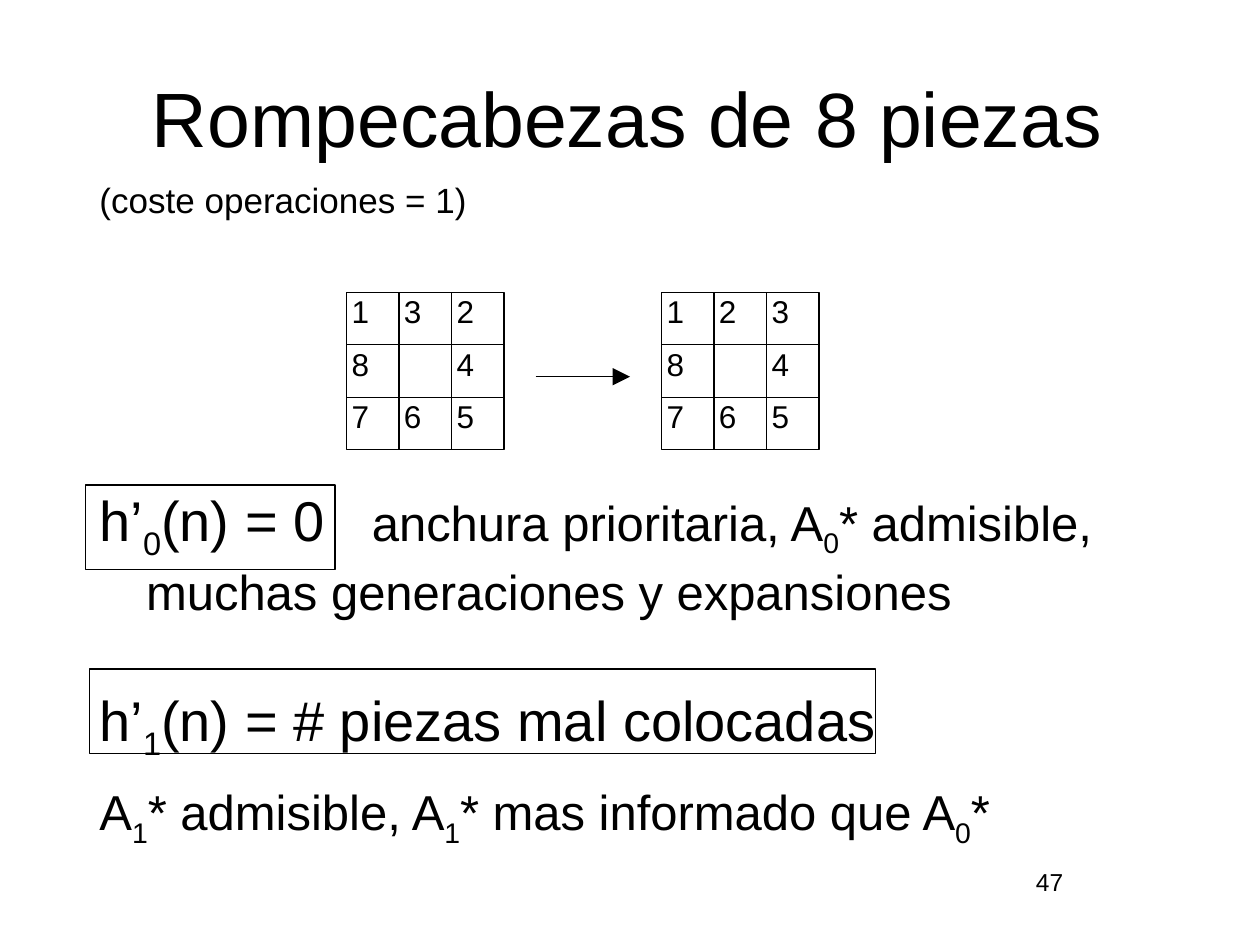
from dataclasses import dataclass

from lxml import etree
from pptx import Presentation
from pptx.dml.color import RGBColor
from pptx.enum.shapes import MSO_CONNECTOR, MSO_SHAPE
from pptx.enum.text import MSO_ANCHOR, PP_ALIGN
from pptx.oxml.ns import qn
from pptx.util import Inches, Pt

LINE = MSO_CONNECTOR.STRAIGHT
RECT = MSO_SHAPE.RECTANGLE
MIDDLE, TOP = MSO_ANCHOR.MIDDLE, MSO_ANCHOR.TOP
LEFT, CENTER = PP_ALIGN.LEFT, PP_ALIGN.CENTER


@dataclass(frozen=True)
class Theme:
    """Colours, font and type sizes of the slide."""
    ink: RGBColor = RGBColor(0, 0, 0)
    font: str = "Arial"
    title: int = 44
    rule: int = 32
    body: int = 28
    note: int = 20
    tile: int = 18
    page: int = 14
    line: float = 0.75


THEME = Theme()
START = ["132", "8 4", "765"]
GOAL = ["123", "8 4", "765"]
SUB = {"baseline": "-25000"}
WIDE = {"spc": "1800"}
NOTES = [
    (4.8, [("(coste operaciones = 1)", THEME.note, {})]),
    (151, [("h’", THEME.rule, {}), ("0", THEME.rule, SUB),
           ("(n) = 0", THEME.rule, {}), (" ", THEME.rule, WIDE),
           ("anchura prioritaria, A", THEME.body, {}),
           ("0", THEME.body, SUB),
           ("* admisible, muchas generaciones y expansiones",
            THEME.body, {})]),
    (37, [("h’", THEME.rule, {}), ("1", THEME.rule, SUB),
          ("(n) = # piezas mal colocadas", THEME.rule, {})]),
    (11.5, [("A", THEME.body, {}), ("1", THEME.body, SUB),
            ("* admisible, A", THEME.body, {}), ("1", THEME.body, SUB),
            ("* mas informado que A", THEME.body, {}),
            ("0", THEME.body, SUB), ("*", THEME.body, {})]),
]


def style(run, size, extra=None):
    """Give a run its font, size, colour and extra attributes."""
    run.font.name = THEME.font
    run.font.size = Pt(size)
    run.font.color.rgb = THEME.ink
    for name, value in (extra or {}).items():
        run.font._element.set(name, value)


def fit(frame, pads, anchor=TOP, wrap=True):
    """Set the margins, anchor and wrapping of a text frame."""
    frame.margin_left, frame.margin_top = Inches(pads[0]), Inches(pads[1])
    frame.margin_right, frame.margin_bottom = Inches(pads[2]), Inches(pads[3])
    frame.vertical_anchor = anchor
    frame.word_wrap = wrap


def label(slide, box, text, size, pads, align=LEFT):
    """Place one short line of text."""
    frame = slide.shapes.add_textbox(*map(Inches, box)).text_frame
    fit(frame, pads, wrap=False)
    frame.text = text
    frame.paragraphs[0].alignment = align
    style(frame.paragraphs[0].runs[0], size)


def outline(slide, box):
    """Draw an empty frame."""
    shape = slide.shapes.add_shape(RECT, *map(Inches, box))
    shape.shadow.inherit = False
    shape.fill.background()
    shape.line.color.rgb = THEME.ink
    shape.line.width = Pt(THEME.line)


def stroke(slide, x1, y1, x2, y2, arrow=False):
    """Draw a straight line, with an arrowhead at its end if asked."""
    line = slide.shapes.add_connector(LINE, *map(Inches, (x1, y1, x2, y2)))
    line.line.color.rgb = THEME.ink
    line.line.width = Pt(THEME.line)
    if arrow:
        etree.SubElement(line.line._get_or_add_ln(), qn("a:tailEnd"),
                         type="triangle", w="lg", len="lg")
    etree.SubElement(line._element.spPr, qn("a:effectLst"))


def board(slide, box, rows):
    """Draw a puzzle board with its numbered tiles."""
    x, y, wide, high = box
    dx, dy = wide / len(rows[0]), high / len(rows)
    outline(slide, box)
    for i in range(1, len(rows)):
        stroke(slide, x + i * dx, y, x + i * dx, y + high)
        stroke(slide, x, y + i * dy, x + wide, y + i * dy)
    for i, row in enumerate(rows):
        for j, tile in enumerate(row):
            if tile != " ":
                label(slide, (x + j * dx, y + i * dy, 0.23, 0.3), tile,
                      THEME.tile, (0.04, 0, 0.04, 0))


def heading(slide, box, text):
    """Place and format the slide title."""
    title = slide.shapes.title
    title.left, title.top, title.width, title.height = map(Inches, box)
    frame = title.text_frame
    fit(frame, (0.06, 0.06, 0.1, 0.06), MIDDLE)
    frame.text = text
    frame.paragraphs[0].alignment = CENTER
    style(frame.paragraphs[0].runs[0], THEME.title)


def notes(slide, box, lines):
    """Write the explanation with hanging indents and subscripts."""
    frame = slide.shapes.add_textbox(*map(Inches, box)).text_frame
    fit(frame, (0, 0, 0.04, 0))
    for i, (gap, parts) in enumerate(lines):
        para = frame.paragraphs[0] if i == 0 else frame.add_paragraph()
        para.space_before = Pt(gap)
        props = para._p.get_or_add_pPr()
        props.set("marL", str(Inches(0.41)))
        props.set("indent", str(Inches(-0.37)))
        for text, size, extra in parts:
            run = para.add_run()
            run.text = text
            style(run, size, extra)


def main():
    """Build the slide and save it."""
    deck = Presentation()
    deck.slide_width, deck.slide_height = Inches(10), Inches(7.5)
    slide = deck.slides.add_slide(deck.slide_layouts[5])
    heading(slide, (0.5, 0.1, 9, 1.65), "Rompecabezas de 8 piezas")
    label(slide, (8.16, 6.83, 0.34, 0.33), "47", THEME.page,
          (0, 0.05, 0, 0.05), CENTER)
    notes(slide, (0.75, 1.42, 8.5, 5.43), NOTES)
    board(slide, (2.75, 2.32, 1.25, 1.25), START)
    board(slide, (5.25, 2.32, 1.25, 1.25), GOAL)
    stroke(slide, 4.25, 2.99, 5, 2.99, arrow=True)
    outline(slide, (0.68, 3.85, 1.98, 0.67))
    outline(slide, (0.71, 5.31, 6.24, 0.67))
    deck.save("out.pptx")


if __name__ == "__main__":
    main()
